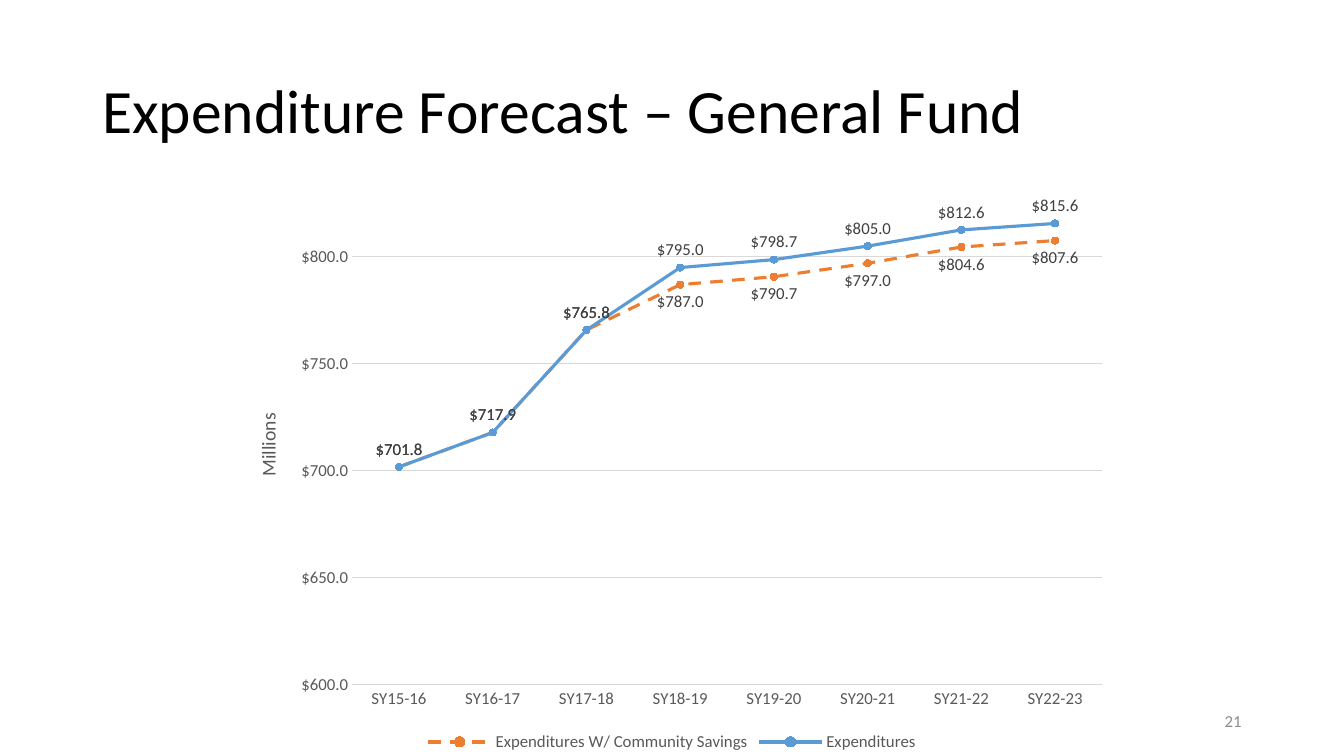
from lxml.etree import SubElement
from pptx import Presentation
from pptx.chart.data import CategoryChartData
from pptx.dml.color import RGBColor
from pptx.enum.chart import XL_CHART_TYPE, XL_LABEL_POSITION, XL_LEGEND_POSITION, XL_MARKER_STYLE, XL_TICK_MARK
from pptx.enum.dml import MSO_LINE
from pptx.enum.text import MSO_ANCHOR, PP_ALIGN
from pptx.oxml.ns import qn
from pptx.util import Pt

FONT = "Calibri"
DOLLARS = '"$"#,##0.0'
YEARS = [f"SY{y}-{y + 1}" for y in range(15, 23)]
SAVINGS = [701.8, 717.9, 765.8, 787.0, 790.7, 797.0, 804.6, 807.6]
EXPENDITURES = [701.8, 717.9, 765.8, 795.0, 798.7, 805.0, 812.6, 815.6]
FIRST_SAVINGS_YEAR = 3


def rgb(color):
    return RGBColor.from_string(color)


def set_font(font, size, color):
    font.name = FONT
    font.size = Pt(size)
    font.bold = False
    font.color.rgb = rgb(color)


def set_line(line, color, width):
    line.color.rgb = rgb(color)
    line.width = Pt(width)


def add_text(s, text, box, size, color, align=PP_ALIGN.LEFT, spacing=1.0):
    tf = s.shapes.add_textbox(*map(Pt, box)).text_frame
    tf.word_wrap = True
    tf.vertical_anchor = MSO_ANCHOR.MIDDLE
    p = tf.paragraphs[0]
    p.text = text
    p.alignment = align
    p.line_spacing = spacing
    set_font(p.font, size, color)


def place(parent, index, **values):
    layout = parent.find(qn("c:layout"))
    if layout is None:
        layout = SubElement(parent, qn("c:layout"))
        parent.insert(index, layout)
    manual = SubElement(layout, qn("c:manualLayout"))
    for tag, value in values.items():
        SubElement(manual, qn(f"c:{tag}")).set("val", str(value))


def style_series(series, color):
    series.smooth = False
    set_line(series.format.line, color, 2.25)
    marker = series.marker
    marker.style = XL_MARKER_STYLE.CIRCLE
    marker.size = 5
    marker.format.fill.solid()
    marker.format.fill.fore_color.rgb = rgb(color)
    set_line(marker.format.line, color, 0.75)
    labels = series.data_labels
    labels.show_value = True
    labels.position = XL_LABEL_POSITION.ABOVE
    labels.number_format = DOLLARS
    labels.number_format_is_linked = False
    set_font(labels.font, 12, "404040")


def style_axes(chart):
    years, dollars = chart.category_axis, chart.value_axis
    for axis in (years, dollars):
        axis.major_tick_mark = XL_TICK_MARK.NONE
        axis.minor_tick_mark = XL_TICK_MARK.NONE
        set_font(axis.tick_labels.font, 12, "595959")
    set_line(years.format.line, "D9D9D9", 0.75)
    dollars.format.line.fill.background()
    dollars.minimum_scale = 600
    dollars.maximum_scale = 840
    dollars.major_unit = 50
    dollars.tick_labels.number_format = DOLLARS
    dollars.tick_labels.number_format_is_linked = False
    set_line(dollars.major_gridlines.format.line, "D9D9D9", 0.75)
    p = dollars.axis_title.text_frame.paragraphs[0]
    p.text = "Millions"
    set_font(p.font, 14, "595959")


def arrange_chart(chart):
    area = next(chart.element.iter(qn("c:plotArea")))
    place(area, 0, layoutTarget="inner", xMode="edge", yMode="edge",
          x=0.143, y=0.022, w=0.837, h=0.859)
    title = next(area.iter(qn("c:title")))
    place(title, 1, xMode="edge", yMode="edge", x=0.03, y=0.42)
    body = next(title.iter(qn("a:bodyPr")))
    body.set("rot", "-5400000")
    body.set("vert", "horz")


def add_forecast_chart(s):
    data = CategoryChartData(number_format=DOLLARS)
    data.categories = YEARS
    data.add_series("Expenditures W/ Community Savings", SAVINGS)
    data.add_series("Expenditures", EXPENDITURES)
    chart = s.shapes.add_chart(
        XL_CHART_TYPE.LINE_MARKERS, Pt(160), Pt(113), Pt(640), Pt(427), data).chart
    set_font(chart.font, 10, "000000")
    chart.has_title = False
    plot = chart.plots[0]
    plot.vary_by_categories = False
    for series, color in zip(plot.series, ("ED7D31", "5B9BD5")):
        style_series(series, color)
    savings = plot.series[0]
    savings.format.line.dash_style = MSO_LINE.DASH
    for i in range(FIRST_SAVINGS_YEAR, len(YEARS)):
        label = savings.points[i].data_label
        set_font(label.font, 12, "404040")
        label.position = XL_LABEL_POSITION.BELOW
    style_axes(chart)
    chart.has_legend = True
    chart.legend.position = XL_LEGEND_POSITION.BOTTOM
    chart.legend.include_in_layout = False
    set_font(chart.legend.font, 12, "595959")
    arrange_chart(chart)


def main():
    prs = Presentation()
    prs.slide_width, prs.slide_height = Pt(960), Pt(540)
    s = prs.slides.add_slide(prs.slide_layouts[6])
    add_text(s, "Expenditure Forecast – General Fund", (66, 29, 828, 104), 44, "000000", spacing=0.9)
    add_text(s, "21", (678, 500.5, 216, 29), 12, "8C8C8C", PP_ALIGN.RIGHT)
    add_forecast_chart(s)
    prs.save("out.pptx")


if __name__ == "__main__":
    main()
